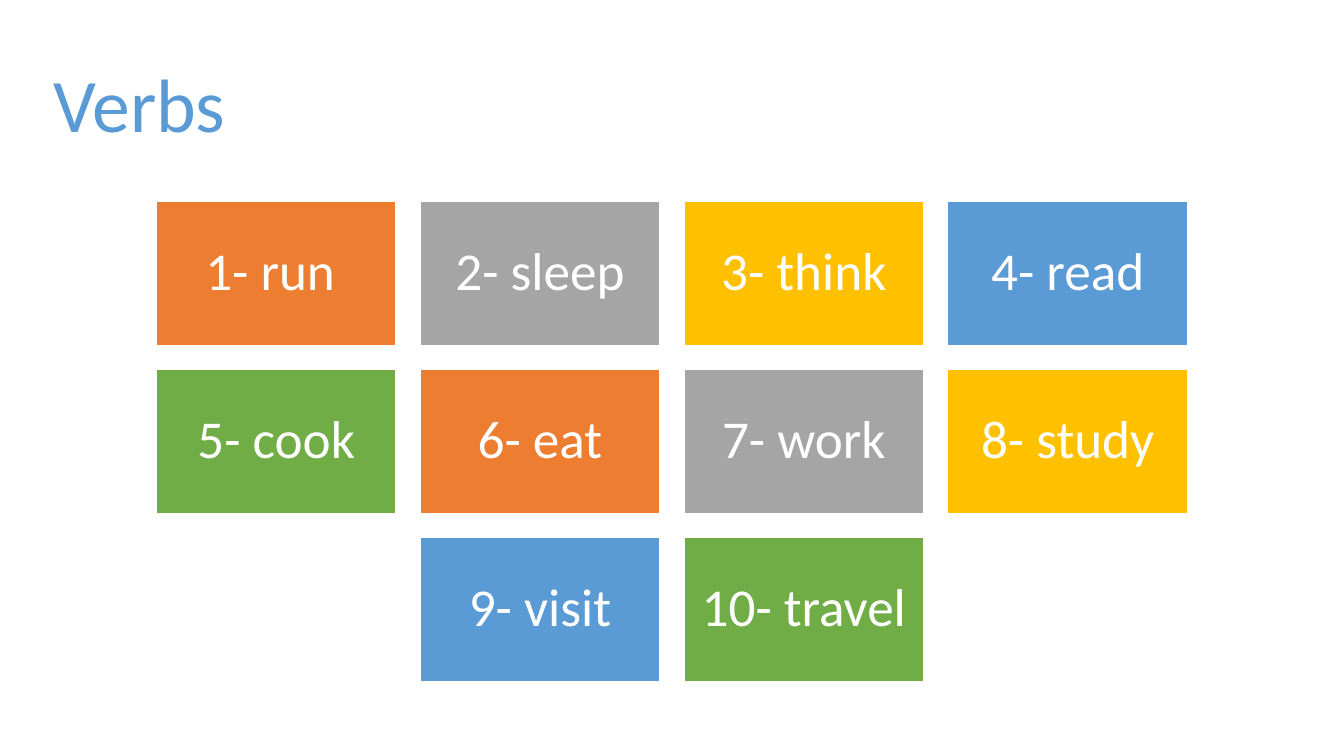
from pptx import Presentation
from pptx import util as u
from pptx.dml import color
from pptx.enum import shapes, text

FILLS = ["ED7D31", "A5A5A5", "FFC000", "5B9BD5", "70AD47"]
ROWS = [
    ["run ", "sleep", "think", "read"],
    ["cook", "eat", "work", "study"],
    ["visit", "travel "],
]
WIDE, HIGH = 2.38, 1.43
STEP_X, STEP_Y = 2.617, 1.665
MID, TOP = 6.665, 2


def rgb(code):
    """Turn a hex string into a colour."""
    return color.RGBColor.from_string(code)


def style(frame, size, code, align):
    """Format the single paragraph of a text frame."""
    frame.word_wrap = True
    frame.vertical_anchor = text.MSO_ANCHOR.MIDDLE
    para = frame.paragraphs[0]
    para.alignment = align
    para.line_spacing = 0.9
    font = para.runs[0].font
    font.name, font.size = "Calibri", u.Pt(size)
    font.color.rgb = rgb(code)


def add_title(slide, words):
    """Place and format the slide title."""
    title = slide.shapes.title
    title.left, title.top = u.Inches(0.43), u.Inches(0.35)
    title.width, title.height = u.Inches(12.48), u.Inches(1.45)
    title.text_frame.text = words
    style(title.text_frame, 54, "5B9BD5", text.PP_ALIGN.LEFT)


def add_card(slide, left, top, words, fill):
    """Draw one coloured verb card."""
    card = slide.shapes.add_shape(
        shapes.MSO_SHAPE.RECTANGLE,
        u.Inches(left), u.Inches(top), u.Inches(WIDE), u.Inches(HIGH))
    card.shadow.inherit = False
    card.fill.solid()
    card.fill.fore_color.rgb = rgb(fill)
    card.line.color.rgb = rgb("FFFFFF")
    card.line.width = u.Pt(1)
    frame = card.text_frame
    frame.margin_left = frame.margin_right = u.Inches(0.16)
    frame.margin_top = frame.margin_bottom = u.Inches(0.16)
    frame.text = words
    style(frame, 38, "FFFFFF", text.PP_ALIGN.CENTER)


def add_cards(slide):
    """Lay out numbered cards in centred rows with cycling fills."""
    count = 0
    for row, verbs in enumerate(ROWS):
        start = MID - (WIDE + (len(verbs) - 1) * STEP_X) / 2
        for col, verb in enumerate(verbs):
            fill = FILLS[count % len(FILLS)]
            count += 1
            add_card(slide, start + col * STEP_X, TOP + row * STEP_Y,
                     f"{count}- {verb}", fill)


def main():
    """Build and save the slide."""
    deck = Presentation()
    deck.slide_width, deck.slide_height = u.Inches(13.33), u.Inches(7.5)
    slide = deck.slides.add_slide(deck.slide_layouts[5])
    add_title(slide, "Verbs")
    add_cards(slide)
    deck.save("out.pptx")


if __name__ == "__main__":
    main()
